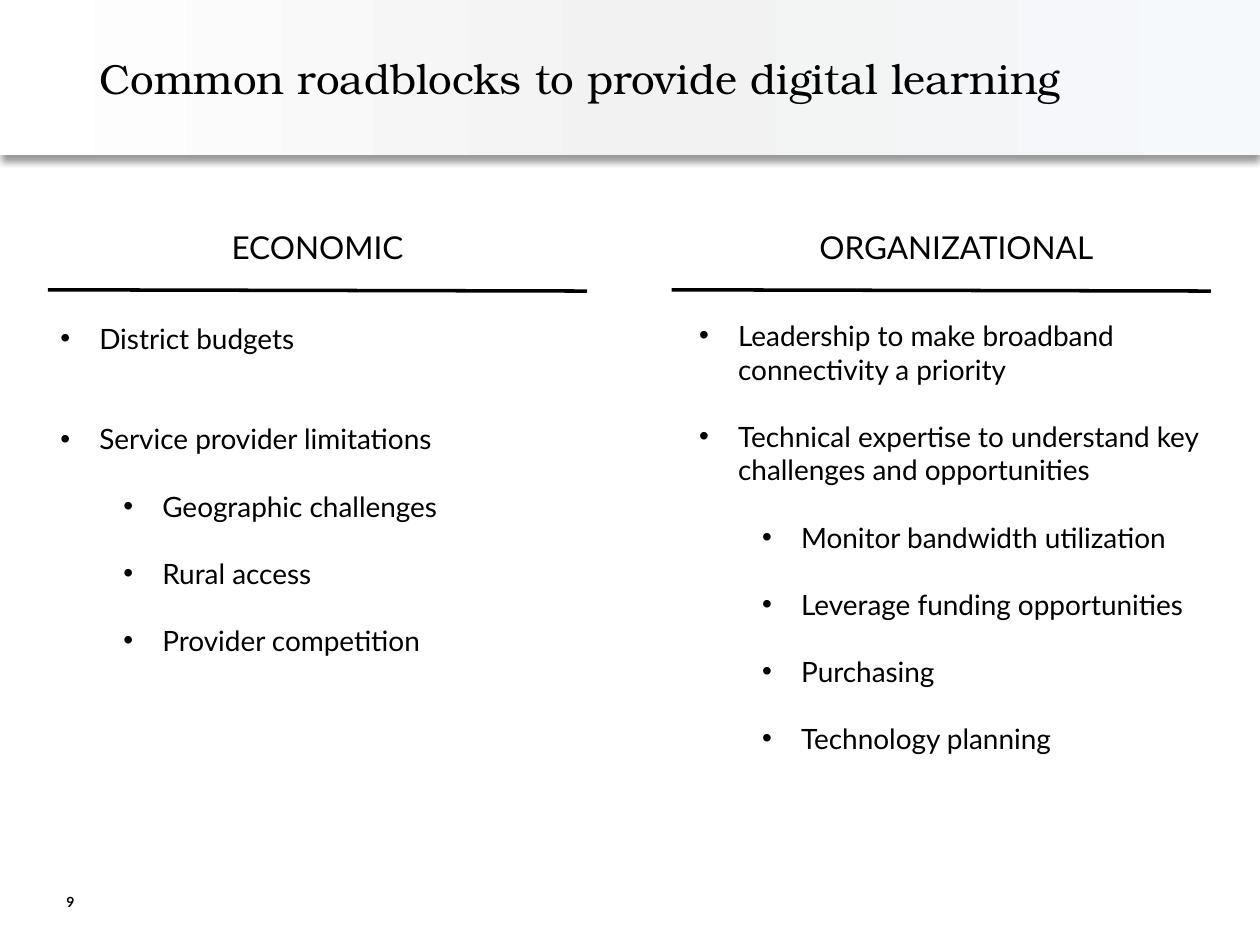
from lxml import etree
from pptx import Presentation
from pptx.dml.color import RGBColor
from pptx.enum.shapes import MSO_CONNECTOR, MSO_SHAPE
from pptx.enum.text import MSO_ANCHOR, MSO_AUTO_SIZE, PP_ALIGN
from pptx.oxml import parse_xml
from pptx.oxml.ns import nsdecls, qn
from pptx.util import Inches, Pt

BLACK = RGBColor(0x00, 0x00, 0x00)
WHITE = RGBColor(0xFF, 0xFF, 0xFF)
PALE_BLUE = RGBColor(0xF6, 0xF9, 0xFC)
LIGHT_GREY = RGBColor(0xF2, 0xF2, 0xF2)

BODY_FONT = "Lato"
TITLE_FONT = "TeX Gyre Bonum"
LINE_GAP = 19.2  # one line of 16 pt body text
HANG = Inches(0.31)
LEVEL_STEP = Inches(0.5)

# Bullets as (text, level, blank lines above)
ECONOMIC = [
    ("District budgets", 0, 0),
    ("Service provider limitations", 0, 2),
    ("Geographic challenges", 1, 1),
    ("Rural access", 1, 1),
    ("Provider competition", 1, 1),
]
ORGANIZATIONAL = [
    ("Leadership to make broadband connectivity a priority", 0, 0),
    ("Technical expertise to understand key challenges and opportunities", 0, 1),
    ("Monitor bandwidth utilization", 1, 1),
    ("Leverage funding opportunities", 1, 1),
    ("Purchasing", 1, 1),
    ("Technology planning", 1, 1),
]


def write(paragraph, text, size=16, font=BODY_FONT, bold=False, align=PP_ALIGN.LEFT):
    paragraph.alignment = align
    run = paragraph.add_run()
    run.text = text
    run.font.size = Pt(size)
    run.font.name = font
    run.font.bold = bold
    run.font.color.rgb = BLACK


def add_text_frame(slide, left, top, width, height, anchor=MSO_ANCHOR.MIDDLE):
    frame = slide.shapes.add_textbox(left, top, width, height).text_frame
    frame.word_wrap = True
    frame.vertical_anchor = anchor
    return frame


def add_bullet(paragraph, level):
    paragraph.level = level
    props = paragraph._p.get_or_add_pPr()
    props.set("marL", str(HANG + level * LEVEL_STEP))
    props.set("indent", str(-HANG))
    etree.SubElement(props, qn("a:buFont")).set("typeface", "Arial")
    etree.SubElement(props, qn("a:buChar")).set("char", "•")


def add_header(slide, left, top, width, height):
    # Gradient band with a soft shadow below
    band = slide.shapes.add_shape(MSO_SHAPE.RECTANGLE, left, top, width, height)
    band.line.fill.background()
    band.fill.gradient()
    band.fill.gradient_angle = 180
    first, last = band.fill.gradient_stops
    first.color.rgb, first.position = PALE_BLUE, 0
    last.color.rgb, last.position = WHITE, 1
    stops = band.element.spPr.find(qn("a:gradFill")).find(qn("a:gsLst"))
    stops.insert(1, parse_xml(
        f'<a:gs {nsdecls("a")} pos="48000"><a:srgbClr val="{LIGHT_GREY}"/></a:gs>'))
    band.shadow.inherit = False
    band.element.spPr.find(qn("a:effectLst")).append(parse_xml(
        f'<a:outerShdw {nsdecls("a")} blurRad="{Pt(4)}" dist="{Pt(3)}" dir="5400000" '
        f'rotWithShape="0"><a:srgbClr val="{BLACK}"><a:alpha val="40000"/>'
        '</a:srgbClr></a:outerShdw>'))

    # Title, in front of the band
    title = slide.shapes.title
    title.element.addprevious(band.element)
    title.left, title.top = left + Inches(0.69), top
    title.width, title.height = Inches(9.08), height
    title.text_frame.vertical_anchor = MSO_ANCHOR.MIDDLE
    title.text_frame.auto_size = MSO_AUTO_SIZE.NONE
    write(title.text_frame.paragraphs[0],
          "Common roadblocks to provide digital learning", size=24, font=TITLE_FONT)


def add_column(slide, left, top, width, heading, bullets, list_top, list_height, rule_left):
    # Heading
    heading_frame = add_text_frame(slide, left, top, width, Inches(0.4))
    write(heading_frame.paragraphs[0], heading, size=18, align=PP_ALIGN.CENTER)

    # Rule under the heading
    rule_top = top + Inches(0.54)
    rule = slide.shapes.add_connector(MSO_CONNECTOR.STRAIGHT, rule_left, rule_top,
                                      rule_left + width, rule_top + Inches(0.01))
    rule.line.color.rgb = BLACK
    rule.line.width = Pt(2)
    etree.SubElement(rule.element.spPr, qn("a:effectLst"))

    # Bullet list
    list_frame = add_text_frame(slide, left, list_top, width, list_height, MSO_ANCHOR.TOP)
    for index, (text, level, blank_lines) in enumerate(bullets):
        paragraph = list_frame.add_paragraph() if index else list_frame.paragraphs[0]
        paragraph.space_before = Pt(blank_lines * LINE_GAP)
        add_bullet(paragraph, level)
        write(paragraph, text)


def add_page_number(slide, left, top, width, height):
    frame = add_text_frame(slide, left, top, width, height)
    write(frame.paragraphs[0], "9", size=8, bold=True, align=PP_ALIGN.RIGHT)


def main():
    prs = Presentation()
    prs.slide_width, prs.slide_height = Inches(10), Inches(7.5)
    slide = prs.slides.add_slide(prs.slide_layouts[5])

    add_header(slide, 0, 0, prs.slide_width, Inches(1.23))
    column_top, column_width = Inches(1.76), Inches(4.28)
    add_column(slide, Inches(0.38), column_top, column_width, "ECONOMIC", ECONOMIC,
               Inches(2.5), Inches(2.79), rule_left=Inches(0.38))
    add_column(slide, Inches(5.45), column_top, column_width, "ORGANIZATIONAL",
               ORGANIZATIONAL, Inches(2.48), Inches(3.6), rule_left=Inches(5.33))
    add_page_number(slide, Inches(0.35), Inches(7.05), Inches(0.34), Inches(0.21))

    prs.save("out.pptx")


if __name__ == "__main__":
    main()
